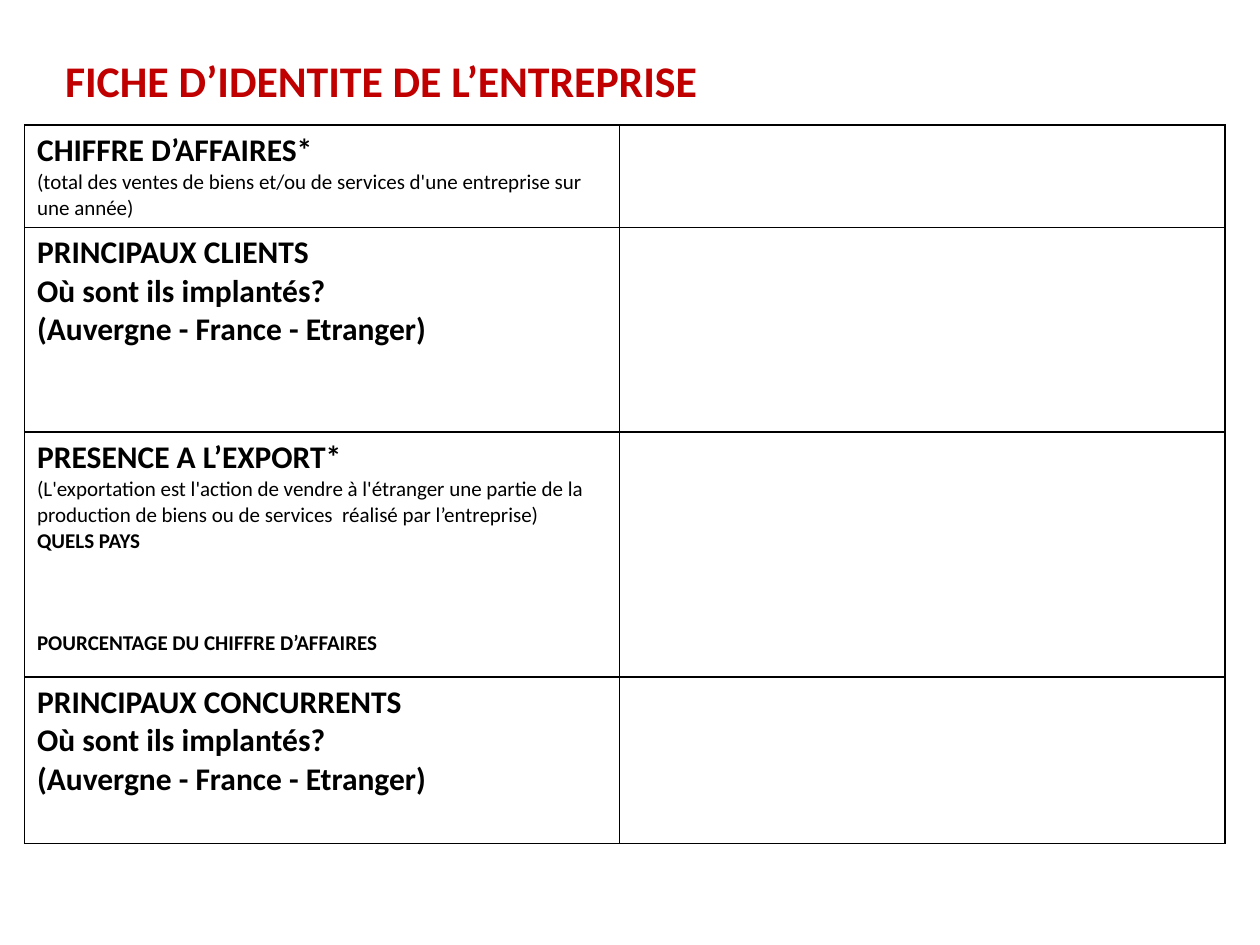
from dataclasses import dataclass

from lxml.etree import SubElement
from pptx import Presentation
from pptx.dml.color import RGBColor
from pptx.enum.text import MSO_ANCHOR, MSO_AUTO_SIZE, PP_ALIGN
from pptx.oxml.ns import qn
from pptx.util import Pt

RED = RGBColor(0xC0, 0x00, 0x00)
BLACK = RGBColor(0x00, 0x00, 0x00)
WHITE = RGBColor(0xFF, 0xFF, 0xFF)
FONT = "Calibri"
HEADING_SIZE = 18
DETAIL_SIZE = 12
COLUMN_WIDTHS = (340, 346)
BORDER_WIDTH = 1


@dataclass(frozen=True)
class Line:
    text: str
    size: float = HEADING_SIZE
    bold: bool = True
    space_before: float = 0


@dataclass(frozen=True)
class Topic:
    height: float
    lines: tuple[Line, ...]


LOCATION = (Line("Où sont ils implantés?"), Line("(Auvergne - France - Etranger)"))

TOPICS = (
    Topic(58.5, (
        Line("CHIFFRE D’AFFAIRES*"),
        Line("(total des ventes de biens et/ou de services d'une entreprise sur une année)",
             DETAIL_SIZE, bold=False),
    )),
    Topic(117, (Line("PRINCIPAUX CLIENTS"), *LOCATION)),
    Topic(140, (
        Line("PRESENCE A L’EXPORT*"),
        Line("(L'exportation est l'action de vendre à l'étranger une partie de la "
             "production de biens ou de services  réalisé par l’entreprise)",
             DETAIL_SIZE, bold=False),
        Line("QUELS PAYS", DETAIL_SIZE),
        Line("POURCENTAGE DU CHIFFRE D’AFFAIRES", DETAIL_SIZE, space_before=44),
    )),
    Topic(95, (Line("PRINCIPAUX CONCURRENTS"), *LOCATION)),
)


def write(paragraph, text: str, *, size: float, color: RGBColor = BLACK,
          bold: bool = True, space_before: float = 0) -> None:
    paragraph.alignment = PP_ALIGN.LEFT
    if space_before:
        paragraph.space_before = Pt(space_before)
    run = paragraph.add_run()
    run.text = text
    run.font.name = FONT
    run.font.size = Pt(size)
    run.font.bold = bold
    run.font.color.rgb = color


def style_cell(cell) -> None:
    """Give the cell black borders on all sides and a white fill."""
    properties = cell._tc.get_or_add_tcPr()
    for side in ("lnL", "lnR", "lnT", "lnB"):
        border = SubElement(properties, qn(f"a:{side}"), w=str(Pt(BORDER_WIDTH)))
        border_fill = SubElement(border, qn("a:solidFill"))
        SubElement(border_fill, qn("a:srgbClr"), val=str(BLACK))
    cell.fill.solid()
    cell.fill.fore_color.rgb = WHITE


def add_title(slide, text: str) -> None:
    title = slide.shapes.title
    title.left, title.top, title.width, title.height = Pt(30), Pt(27), Pt(437), Pt(37)
    frame = title.text_frame
    frame.auto_size = MSO_AUTO_SIZE.NONE
    frame.vertical_anchor = MSO_ANCHOR.TOP
    frame.word_wrap = True
    write(frame.paragraphs[0], text, size=25, color=RED)


def add_topic_table(slide, topics: tuple[Topic, ...]) -> None:
    table = slide.shapes.add_table(
        len(topics), len(COLUMN_WIDTHS), Pt(14), Pt(71.5),
        Pt(sum(COLUMN_WIDTHS)), Pt(sum(topic.height for topic in topics))).table
    table.first_row = False
    table.horz_banding = False
    for column, width in zip(table.columns, COLUMN_WIDTHS):
        column.width = Pt(width)
    for row, topic in zip(table.rows, topics):
        row.height = Pt(topic.height)
        for cell in row.cells:
            style_cell(cell)
        frame = row.cells[0].text_frame
        for index, line in enumerate(topic.lines):
            paragraph = frame.add_paragraph() if index else frame.paragraphs[0]
            write(paragraph, line.text, size=line.size, bold=line.bold,
                  space_before=line.space_before)


def main() -> None:
    presentation = Presentation()
    presentation.slide_width, presentation.slide_height = Pt(720), Pt(540)
    title_only = presentation.slide_layouts[5]
    slide = presentation.slides.add_slide(title_only)
    add_title(slide, "FICHE D’IDENTITE DE L’ENTREPRISE")
    add_topic_table(slide, TOPICS)
    presentation.save("out.pptx")


if __name__ == "__main__":
    main()
